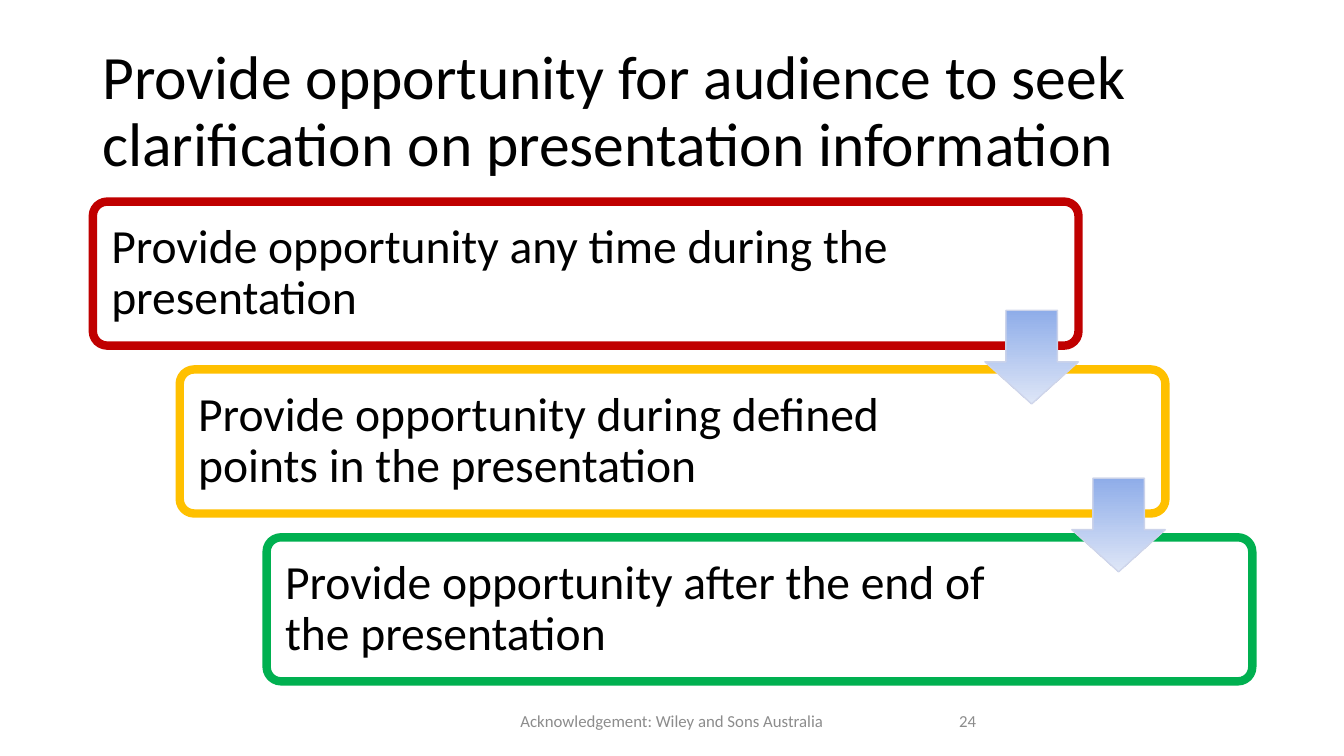
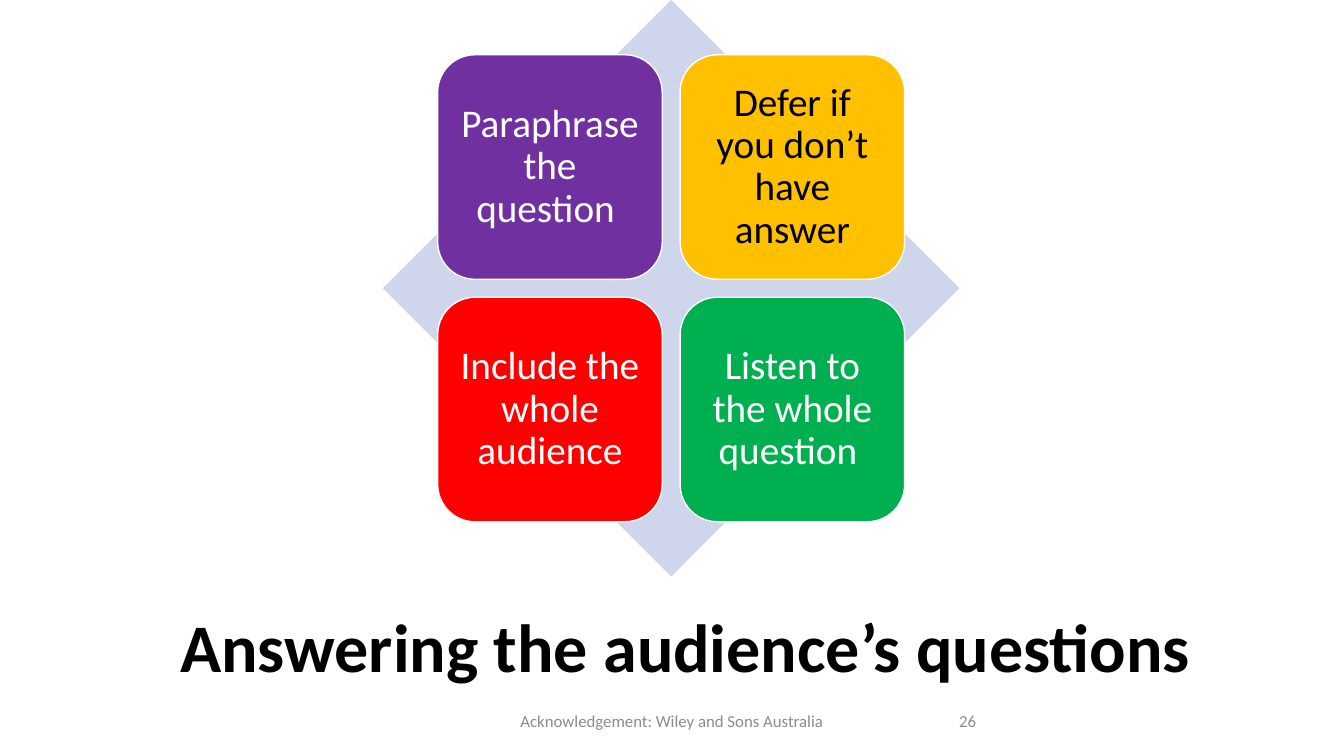
"""Build two slides on taking questions from the audience."""
from lxml import etree
from pptx import Presentation
from pptx.dml.color import RGBColor
from pptx.enum.shapes import MSO_SHAPE
from pptx.enum.text import MSO_ANCHOR, PP_ALIGN
from pptx.oxml.ns import qn
from pptx.util import Cm, Pt

ROUNDED = MSO_SHAPE.ROUNDED_RECTANGLE
DIAMOND = MSO_SHAPE.DIAMOND
DOWN_ARROW = MSO_SHAPE.DOWN_ARROW
MIDDLE = MSO_ANCHOR.MIDDLE
LEFT, CENTER = PP_ALIGN.LEFT, PP_ALIGN.CENTER

FONT = "Calibri"
COLORS = {
    "black": "000000", "white": "FFFFFF", "grey": "8C8C8C",
    "dark red": "C00000", "red": "FF0000", "amber": "FFC000",
    "green": "00B050", "purple": "7030A0", "pale": "CFD5EA",
    "arrow top": "8FADE9", "arrow tip": "DEE6F7",
}

CREDIT = "Acknowledgement: Wiley and Sons Australia"
STEPS_TITLE = "Provide opportunity for audience to seek clarification on presentation information"
STEPS = [
    ("Provide opportunity any time during the presentation", "dark red", 4.09),
    ("Provide opportunity during defined points in the presentation", "amber", 4.93),
    ("Provide opportunity after the end of the presentation", "green", 4.93),
]
ANSWERS_TITLE = "Answering the audience’s questions"
ANSWERS = [
    ("Paraphrase the question ", "purple", "white"),
    ("Defer if you don’t have answer", "amber", "black"),
    ("Include the whole audience", "red", "white"),
    ("Listen to the whole question ", "green", "white"),
]

STEP_LEFT, STEP_TOP, STEP_WIDTH, STEP_HEIGHT = 2.34, 5.08, 24.84, 3.63
STEP_SHIFT, STEP_DROP = 2.19, 4.23
ARROW_SIZE, ARROW_DROP = 2.36, 2.74
DIAMOND_LEFT, DIAMOND_SIZE = 9.65, 14.53
TILE_SIZE, TILE_GAP = 5.66, 0.45


def rgb(name):
    return RGBColor.from_string(COLORS[name])


def write(shape, text, size, color="black", align=LEFT, bold=False, spacing=0.9, insets=None):
    frame = shape.text_frame
    frame.word_wrap = True
    frame.vertical_anchor = MIDDLE
    if insets:
        (frame.margin_left, frame.margin_top,
         frame.margin_right, frame.margin_bottom) = map(Cm, insets)
    paragraph = frame.paragraphs[0]
    paragraph.alignment = align
    paragraph.line_spacing = spacing
    run = paragraph.add_run()
    run.text = text
    font = run.font
    font.name, font.size, font.bold = FONT, Pt(size), bold
    font.color.rgb = rgb(color)


def add_text(slide, box, text, size, **style):
    write(slide.shapes.add_textbox(*map(Cm, box)), text, size, **style)


def add_figure(slide, kind, box, fill=None, line=None, width=1):
    figure = slide.shapes.add_shape(kind, *map(Cm, box))
    figure.shadow.inherit = False
    if fill:
        figure.fill.solid()
        figure.fill.fore_color.rgb = rgb(fill)
    else:
        figure.fill.background()
    if line:
        figure.line.color.rgb = rgb(line)
        figure.line.width = Pt(width)
    else:
        figure.line.fill.background()
    return figure


def add_step_arrow(slide, left, top):
    arrow = add_figure(slide, DOWN_ARROW, (left, top, ARROW_SIZE, ARROW_SIZE), line="pale")
    arrow.adjustments[0], arrow.adjustments[1] = 0.55, 0.45
    arrow.fill.gradient()
    arrow.fill.gradient_angle = 270
    for stop, color in zip(arrow.fill.gradient_stops, ("arrow top", "arrow tip")):
        stop.color.rgb = rgb(color)
    outline = arrow.line._ln.find(".//" + qn("a:srgbClr"))
    etree.SubElement(outline, qn("a:alpha"), val="90000")


def add_slide(deck, number):
    slide = deck.slides.add_slide(deck.slide_layouts[6])
    footer = {"color": "grey", "spacing": 1.0}
    add_text(slide, (11.22, 17.66, 11.43, 1.01), CREDIT, 12, align=CENTER, **footer)
    add_text(slide, (23.92, 17.66, 7.62, 1.01), str(number), 12, **footer)
    return slide


def build_steps(deck):
    slide = add_slide(deck, 24)
    add_text(slide, (2.33, 1.01, 29.21, 3.68), STEPS_TITLE, 44)
    corners = [(STEP_LEFT + i * STEP_SHIFT, STEP_TOP + i * STEP_DROP) for i in range(len(STEPS))]
    for (text, color, right_inset), corner in zip(STEPS, corners):
        card = add_figure(slide, ROUNDED, (*corner, STEP_WIDTH, STEP_HEIGHT), line=color, width=6)
        card.adjustments[0] = 0.1
        write(card, text, 34, insets=(0.36, 0.36, right_inset, 0.36))
    for left, top in corners[:-1]:
        add_step_arrow(slide, left + STEP_WIDTH - ARROW_SIZE, top + ARROW_DROP)


def build_answers(deck):
    slide = add_slide(deck, 26)
    add_text(slide, (3.86, 15.04, 26.82, 2.72), ANSWERS_TITLE, 48.6, align=CENTER, bold=True)
    add_figure(slide, DIAMOND, (DIAMOND_LEFT, 0, DIAMOND_SIZE, DIAMOND_SIZE), fill="pale")
    pitch = TILE_SIZE + TILE_GAP
    margin = (DIAMOND_SIZE - pitch - TILE_SIZE) / 2
    for i, (text, fill, color) in enumerate(ANSWERS):
        row, column = divmod(i, 2)
        box = (DIAMOND_LEFT + margin + column * pitch, margin + row * pitch, TILE_SIZE, TILE_SIZE)
        tile = add_figure(slide, ROUNDED, box, fill=fill, line="white")
        write(tile, text, 28, color=color, align=CENTER, insets=(0.3,) * 4)


def main():
    deck = Presentation()
    deck.slide_width, deck.slide_height = Cm(33.87), Cm(19.05)
    build_steps(deck)
    build_answers(deck)
    deck.save("out.pptx")


if __name__ == "__main__":
    main()
